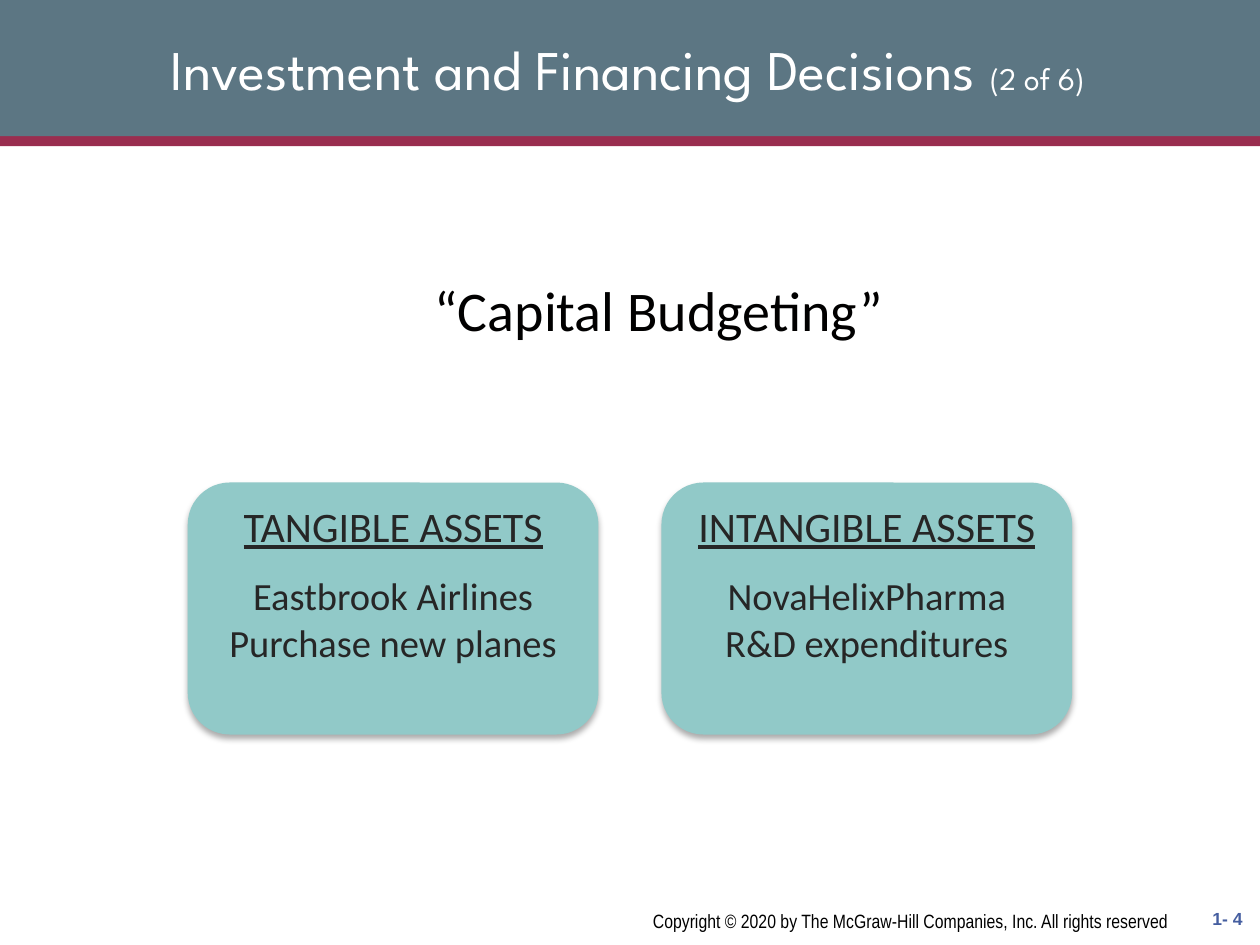
from dataclasses import dataclass

from lxml.etree import SubElement
from pptx import Presentation
from pptx.dml.color import RGBColor
from pptx.enum.shapes import MSO_SHAPE
from pptx.enum.text import MSO_ANCHOR, MSO_AUTO_SIZE, PP_ALIGN
from pptx.oxml.ns import qn
from pptx.shapes.autoshape import Shape
from pptx.slide import Slide
from pptx.text.text import Font
from pptx.util import Inches, Pt


@dataclass(frozen=True)
class TextStyle:
    font: str
    size: int
    color: str
    bold: bool = False
    underline: bool = False


@dataclass(frozen=True)
class Theme:
    band: str = "5C7683"
    stripe: str = "992D4F"
    card: str = "91C9C8"
    shadow: str = "000000"
    title: TextStyle = TextStyle("League Spartan", 32, "FFFFFF")
    counter: TextStyle = TextStyle("League Spartan", 18, "FFFFFF")
    topic: TextStyle = TextStyle("Calibri", 32, "010000")
    heading: TextStyle = TextStyle("Calibri", 24, "262626", underline=True)
    example: TextStyle = TextStyle("Calibri", 22, "262626")
    copyright: TextStyle = TextStyle("Arial Narrow", 11, "000000")
    page_number: TextStyle = TextStyle("Arial", 10, "455EA0", bold=True)


@dataclass(frozen=True)
class Frame:
    left: float
    top: float
    width: float
    height: float

    def lengths(self) -> tuple[Inches, ...]:
        return tuple(Inches(value) for value in (self.left, self.top, self.width, self.height))


@dataclass(frozen=True)
class AssetCard:
    heading: str
    company: str
    investment: str


THEME = Theme()
CARDS = [
    AssetCard("TANGIBLE ASSETS", "Eastbrook Airlines", "Purchase new planes"),
    AssetCard("INTANGIBLE ASSETS", "NovaHelixPharma", "R&D expenditures"),
]
FIRST_CARD = Frame(1.49, 3.83, 3.26, 2)
CARD_PITCH = 3.76


def apply_style(font: Font, style: TextStyle) -> None:
    font.name = style.font
    font.size = Pt(style.size)
    font.bold = style.bold
    font.underline = style.underline
    font.color.rgb = RGBColor.from_string(style.color)


def place(shape: Shape, frame: Frame) -> None:
    shape.left, shape.top, shape.width, shape.height = frame.lengths()


def add_filled_shape(page: Slide, kind: MSO_SHAPE, frame: Frame, color: str) -> Shape:
    shape = page.shapes.add_shape(kind, *frame.lengths())
    shape.shadow.inherit = False
    shape.fill.solid()
    shape.fill.fore_color.rgb = RGBColor.from_string(color)
    shape.line.fill.background()
    return shape


def add_band(page: Slide, frame: Frame, color: str) -> None:
    band = add_filled_shape(page, MSO_SHAPE.RECTANGLE, frame, color)
    page.shapes._spTree.insert(2, band._element)


def add_soft_shadow(shape: Shape) -> None:
    effects = shape._element.spPr.find(qn("a:effectLst"))
    shadow = SubElement(effects, qn("a:outerShdw"), blurRad=str(Pt(3.5)), dist=str(Pt(2.2)),
                        dir="5400000", rotWithShape="0")
    color = SubElement(shadow, qn("a:srgbClr"), val=THEME.shadow)
    SubElement(color, qn("a:alpha"), val="32000")


def add_card(page: Slide, card: AssetCard, frame: Frame) -> None:
    shape = add_filled_shape(page, MSO_SHAPE.ROUNDED_RECTANGLE, frame, THEME.card)
    add_soft_shadow(shape)
    text = shape.text_frame
    text.vertical_anchor = MSO_ANCHOR.TOP
    text.text = "\n".join((card.heading, card.company, card.investment))
    styles = (THEME.heading, THEME.example, THEME.example)
    for para, style in zip(text.paragraphs, styles):
        para.alignment = PP_ALIGN.CENTER
        apply_style(para.font, style)
    text.paragraphs[1].space_before = Pt(12)


def add_footer(page: Slide, frame: Frame, words: str, style: TextStyle,
               anchor: MSO_ANCHOR, wrap: bool) -> None:
    text = page.shapes.add_textbox(*frame.lengths()).text_frame
    text.word_wrap = wrap
    text.vertical_anchor = anchor
    para = text.paragraphs[0]
    para.text = words
    para.alignment = PP_ALIGN.RIGHT
    apply_style(para.font, style)


def fill_title(title: Shape) -> None:
    place(title, Frame(0.25, 0.08, 9.46, 0.92))
    title.text_frame.auto_size = MSO_AUTO_SIZE.NONE
    title.text_frame.vertical_anchor = MSO_ANCHOR.MIDDLE
    para = title.text_frame.paragraphs[0]
    para.alignment = PP_ALIGN.CENTER
    parts = (("Investment and Financing Decisions ", THEME.title), ("(2 of 6)", THEME.counter))
    for words, style in parts:
        span = para.add_run()
        span.text = words
        apply_style(span.font, style)


def fill_topic(body: Shape) -> None:
    place(body, Frame(0.73, 2.14, 8.5, 1.2))
    body.text_frame.auto_size = MSO_AUTO_SIZE.NONE
    para = body.text_frame.paragraphs[0]
    para.text = "“Capital Budgeting”"
    para.alignment = PP_ALIGN.CENTER
    para.space_before = Pt(0)
    properties = para._p.get_or_add_pPr()
    properties.set("marL", str(Inches(0.5)))
    properties.set("indent", "0")
    SubElement(properties, qn("a:buNone"))
    apply_style(para.font, THEME.topic)


def main() -> None:
    deck = Presentation()
    deck.slide_width, deck.slide_height = Inches(10), Inches(7.5)
    page = deck.slides.add_slide(deck.slide_layouts[1])

    add_band(page, Frame(0, 0, 10, 1.08), THEME.band)
    add_band(page, Frame(0, 1.08, 10, 0.08), THEME.stripe)
    fill_title(page.shapes.title)
    fill_topic(page.placeholders[1])

    for index, card in enumerate(CARDS):
        left = FIRST_CARD.left + index * CARD_PITCH
        add_card(page, card, Frame(left, FIRST_CARD.top, FIRST_CARD.width, FIRST_CARD.height))

    add_footer(page, Frame(3.58, 7.17, 5.83, 0.29),
               "Copyright © 2020 by The McGraw-Hill Companies, Inc. All rights reserved ",
               THEME.copyright, MSO_ANCHOR.TOP, True)
    add_footer(page, Frame(9.46, 7.08, 0.5, 0.42), "1- 4",
               THEME.page_number, MSO_ANCHOR.MIDDLE, False)
    deck.save("out.pptx")


if __name__ == "__main__":
    main()
